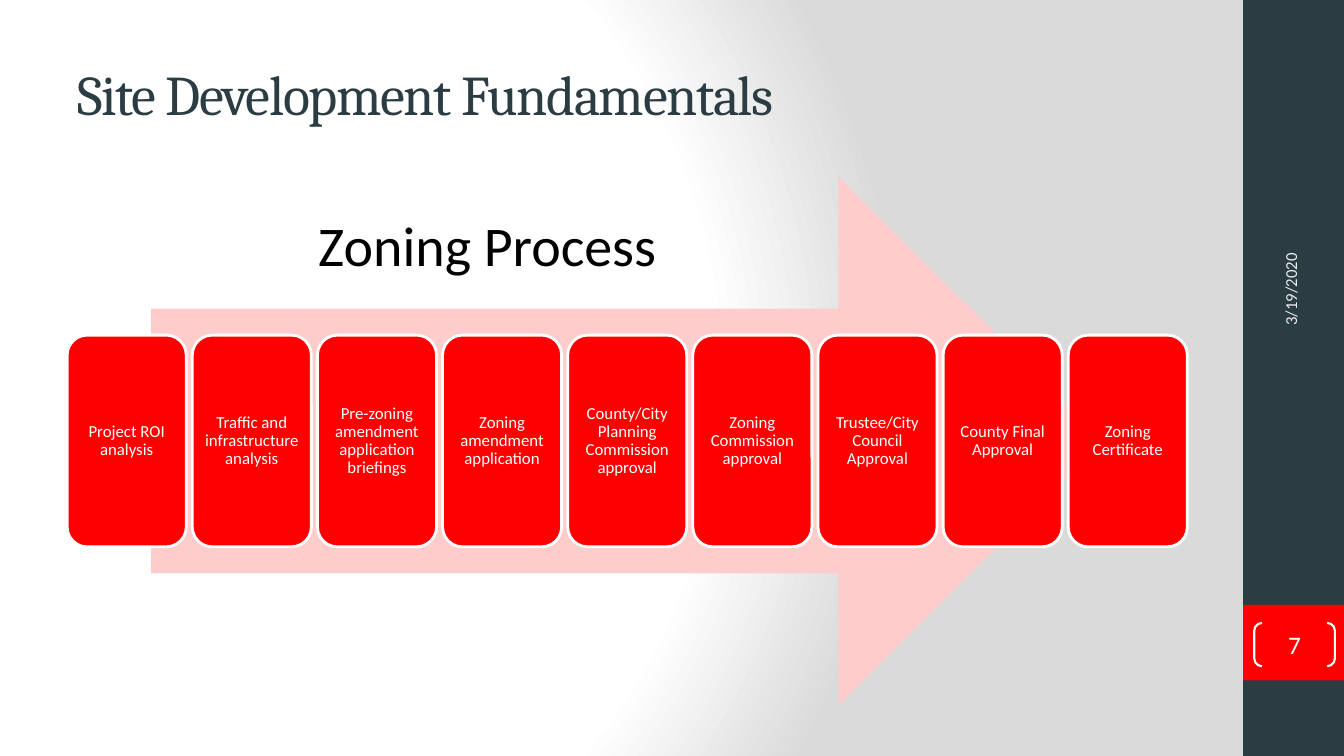
from pptx import Presentation
from pptx.dml.color import RGBColor
from pptx.enum.shapes import MSO_SHAPE
from pptx.enum.text import MSO_ANCHOR, MSO_AUTO_SIZE, PP_ALIGN
from pptx.oxml import parse_xml
from pptx.oxml.ns import nsdecls
from pptx.util import Inches, Pt

WIDE, HIGH = 13.33, 7.5
RED, PINK, SLATE, WHITE = "FF0000", "FFCCCC", "2C3C43", "FFFFFF"
STEPS = [
    "Project ROI analysis",
    "Traffic and infrastructure analysis",
    "Pre-zoning amendment application briefings",
    "Zoning amendment application",
    "County/City Planning Commission approval",
    "Zoning Commission approval",
    "Trustee/City Council Approval",
    "County Final Approval",
    "Zoning Certificate",
]


def color(code):
    return RGBColor.from_string(code)


def inches(box):
    return [Inches(v) for v in box]


def shape(slide, kind, box, fill=None, line=None, width=0):
    part = slide.shapes.add_shape(kind, *inches(box))
    part.shadow.inherit = False
    if fill:
        part.fill.solid()
        part.fill.fore_color.rgb = color(fill)
    else:
        part.fill.background()
    if line:
        part.line.color.rgb = color(line)
        part.line.width = Pt(width)
    else:
        part.line.fill.background()
    return part


def write(part, text, size, code, align=PP_ALIGN.CENTER, font="Calibri",
          pad=None, anchor=MSO_ANCHOR.MIDDLE):
    frame = part.text_frame
    frame.text = text
    frame.word_wrap = True
    frame.auto_size = MSO_AUTO_SIZE.NONE
    frame.vertical_anchor = anchor
    if pad is not None:
        frame.margin_left = frame.margin_right = Inches(pad)
        frame.margin_top = frame.margin_bottom = Inches(pad)
    line = frame.paragraphs[0]
    line.alignment = align
    run = line.runs[0]
    run.font.size = Pt(size)
    run.font.name = font
    run.font.color.rgb = color(code)
    return line


def backdrop(slide):
    stops = "".join(
        f'<a:gs pos="{pos}"><a:srgbClr val="{code}"/></a:gs>'
        for pos, code in [(0, WHITE), (75000, WHITE), (100000, "DADADA")])
    back = parse_xml(
        f'<p:bg {nsdecls("p", "a")}><p:bgPr><a:gradFill rotWithShape="1">'
        f'<a:gsLst>{stops}</a:gsLst><a:path path="circle">'
        '<a:fillToRect l="20000" t="50000" r="100000" b="50000"/></a:path>'
        '</a:gradFill><a:effectLst/></p:bgPr></p:bg>')
    slide.element.cSld.insert(0, back)


def heading(slide, box):
    title = slide.shapes.title
    title.left, title.top, title.width, title.height = inches(box)
    line = write(title, "Site Development Fundamentals", 40, SLATE,
                 PP_ALIGN.LEFT, "Cambria")
    line.runs[0].font._element.set("spc", "-100")


def sidebar(slide, box):
    left, top, wide, high = box
    shape(slide, MSO_SHAPE.RECTANGLE, box, SLATE)
    # Page number in brackets
    tab = top + 0.8 * high
    shape(slide, MSO_SHAPE.RECTANGLE, (left, tab, wide, 0.1 * high), RED)
    page = shape(slide, MSO_SHAPE.DOUBLE_BRACKET,
                 (left + 0.11 * wide, tab + 0.18, 0.8 * wide, 0.43),
                 line=WHITE, width=1.5)
    page.adjustments[0] = 0.179
    write(page, "7", 18, WHITE, pad=0)
    # Date, turned to read upwards
    long, deep = 2.67, 0.53
    date = slide.shapes.add_textbox(
        *inches((left + (wide - long) / 2 - 0.03, 1.73, long, deep)))
    date.rotation = 270
    write(date, "3/19/2020", 12, "EBEBEB", PP_ALIGN.LEFT)


def process(slide, box):
    left, top, wide, high = box
    # Arrow spans 85% of the width, centred
    shape(slide, MSO_SHAPE.RIGHT_ARROW,
          (left + 0.075 * wide, top, 0.85 * wide, high), PINK)
    # Step cards, equally spaced over the middle 40% of the height
    gap = 0.06
    card = (wide - gap * (len(STEPS) - 1)) / len(STEPS)
    for i, text in enumerate(STEPS):
        step = shape(slide, MSO_SHAPE.ROUNDED_RECTANGLE,
                     (left + i * (card + gap), top + 0.3 * high,
                      card, 0.4 * high), RED, WHITE, 2)
        write(step, text, 12, WHITE, pad=0.05).line_spacing = 0.9
    # Caption above the arrow's shaft
    label = slide.shapes.add_textbox(
        *inches((left + 1.83, top + 0.29, 4.67, 0.77)))
    write(label, "Zoning Process", 40, "000000", anchor=MSO_ANCHOR.TOP)


def main():
    deck = Presentation()
    deck.slide_width, deck.slide_height = inches((WIDE, HIGH))
    slide = deck.slides.add_slide(deck.slide_layouts[5])
    backdrop(slide)
    sidebar(slide, (WIDE - 1, 0, 1, HIGH))
    heading(slide, (0.05 * WIDE, 0.04 * HIGH, 11.11, 1.25))
    process(slide, (0.05 * WIDE, 1.75, 11.11, 0.7 * HIGH))
    deck.save("out.pptx")


if __name__ == "__main__":
    main()
